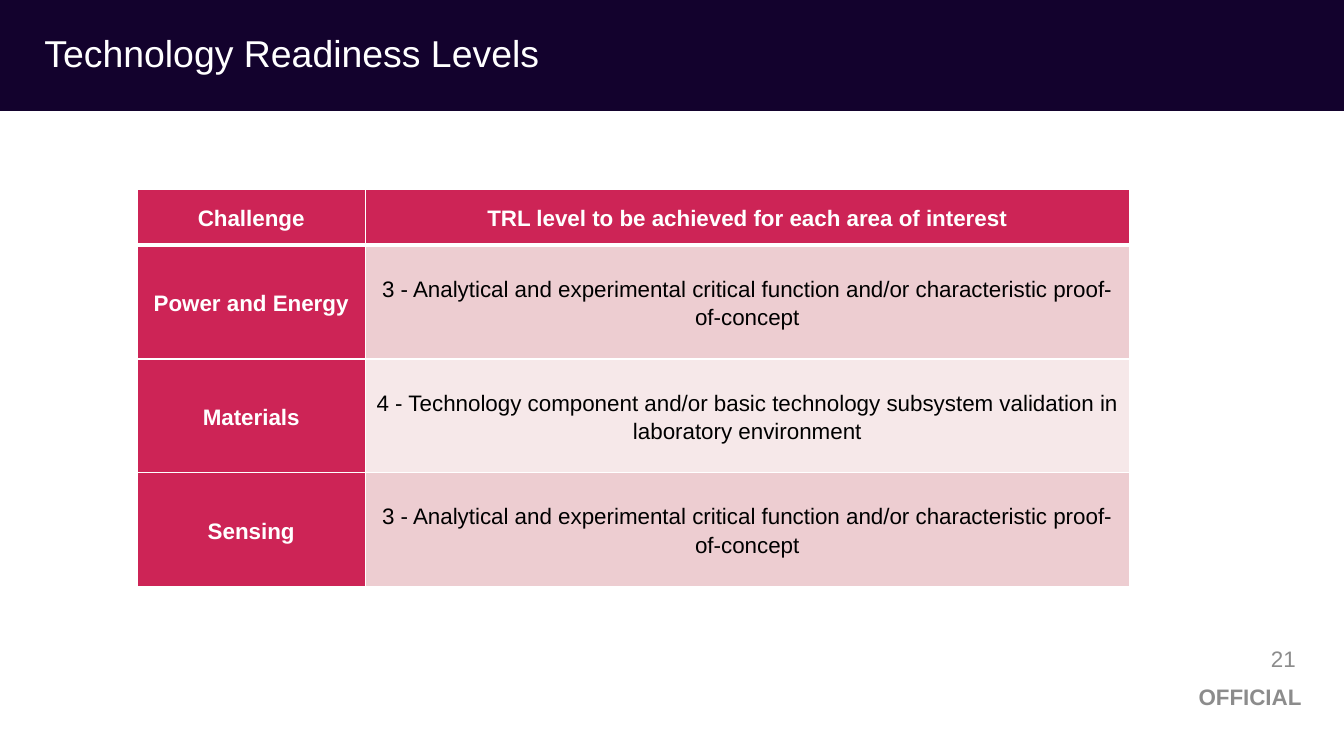
import pptx
import pptx.util
import pptx.dml.color
import pptx.enum.shapes
import pptx.enum.text
import lxml.etree
from dataclasses import dataclass
from typing import NamedTuple

ALIGN = pptx.enum.text.PP_ALIGN
MIDDLE = pptx.enum.text.MSO_ANCHOR.MIDDLE


@dataclass(frozen=True)
class Theme:
    font: str = "Arial"
    navy: str = "13022D"
    red: str = "CD2456"
    rose: str = "EDCDD1"
    blush: str = "F6E8E9"
    white: str = "FFFFFF"
    black: str = "000000"
    grey: str = "8C8C8C"
    title: float = 26.7
    body: float = 16
    thin: float = 1
    thick: float = 3


class Box(NamedTuple):
    left: float
    top: float
    width: float
    height: float

    def inner(self, x, y, w, h):
        """Inner box given as shares of this one."""
        return Box(self.left + x * self.width, self.top + y * self.height,
                   w * self.width, h * self.height)

    def emu(self):
        return [pptx.util.Inches(side) for side in self]


THEME = Theme()
PAGE = Box(0, 0, 13.33, 7.5)
HEADS = ("Challenge", "TRL level to be achieved for each area of interest")
PROOF = ("3 - Analytical and experimental critical function and/or "
         "characteristic proof-of-concept")
LAB = ("4 - Technology component and/or basic technology subsystem "
       "validation in laboratory environment")
LEVELS = (("Power and Energy", PROOF), ("Materials", LAB), ("Sensing", PROOF))


def paint(fill, color):
    fill.solid()
    fill.fore_color.rgb = pptx.dml.color.RGBColor.from_string(color)


def write(para, text, size, color, bold=False, align=ALIGN.LEFT):
    para.alignment = align
    run = para.add_run()
    run.text = text
    run.font.name = THEME.font
    run.font.size = pptx.util.Pt(size)
    run.font.bold = bold
    run.font.color.rgb = pptx.dml.color.RGBColor.from_string(color)


def inset(area, left, top, right, low):
    area.margin_left = pptx.util.Inches(left)
    area.margin_top = pptx.util.Inches(top)
    area.margin_right = pptx.util.Inches(right)
    area.margin_bottom = pptx.util.Inches(low)


def label(slide, box, text, size, color, pads, **style):
    frame = slide.shapes.add_textbox(*box.emu()).text_frame
    frame.word_wrap = True
    frame.vertical_anchor = MIDDLE
    inset(frame, *pads)
    write(frame.paragraphs[0], text, size, color, **style)
    return frame.paragraphs[0]


def edge(cell, sides):
    """Draw white cell borders; sides maps tag to width in points."""
    props = cell._tc.get_or_add_tcPr()
    for spot, (side, width) in enumerate(sides.items()):
        line = lxml.etree.fromstring(
            '<a:%s xmlns:a="http://schemas.openxmlformats.org/drawingml/2006/main"'
            ' w="%d"><a:solidFill><a:srgbClr val="%s"/></a:solidFill></a:%s>'
            % (side, pptx.util.Pt(width), THEME.white, side))
        props.insert(spot, line)


# Title band across the top
def header(slide, box):
    band = slide.shapes.add_shape(
        pptx.enum.shapes.MSO_SHAPE.RECTANGLE, *box.emu())
    band.shadow.inherit = False
    paint(band.fill, THEME.navy)
    band.line.fill.background()
    para = label(slide, box.inner(0, 0.06, 0.75, 0.87),
                 "Technology Readiness Levels", THEME.title, THEME.white,
                 (0.44, 0.05, 0.1, 0.05))
    para.line_spacing = 0.9


# Table of challenges and their levels
def levels(slide, box):
    rows = (HEADS,) + LEVELS
    grid = slide.shapes.add_table(len(rows), len(HEADS), *box.emu()).table
    for col, share in zip(grid.columns, (0.23, 0.77)):
        col.width = pptx.util.Inches(box.width * share)
    for r, texts in enumerate(rows):
        share = 0.14 if r == 0 else 0.86 / len(LEVELS)
        grid.rows[r].height = pptx.util.Inches(box.height * share)
        for c, text in enumerate(texts):
            cell = grid.cell(r, c)
            head = r == 0 or c == 0
            tint = THEME.rose if r % 2 else THEME.blush
            paint(cell.fill, THEME.red if head else tint)
            edge(cell, {"lnL": THEME.thin, "lnR": THEME.thin,
                        "lnT": THEME.thick if r == 1 else THEME.thin,
                        "lnB": THEME.thick if r == 0 else THEME.thin})
            cell.vertical_anchor = MIDDLE
            inset(cell, 0.07, 0, 0.07, 0)
            para = cell.text_frame.paragraphs[0]
            para.line_spacing = 1.15
            para.space_after = pptx.util.Pt(10)
            write(para, text, THEME.body, THEME.white if head else THEME.black,
                  bold=head, align=ALIGN.CENTER)


# Page number and marking at lower right
def footer(slide, box):
    label(slide, box.inner(0, 0, 1, 0.42), "21", THEME.body, THEME.grey,
          (0.1, 0.05, 0.1, 0.05), align=ALIGN.RIGHT)
    label(slide, box.inner(0, 0.45, 1, 0.55), "OFFICIAL", THEME.body, THEME.grey,
          (0.1, 0.05, 0.04, 0.05), bold=True, align=ALIGN.RIGHT)


def main():
    deck = pptx.Presentation()
    deck.slide_width = pptx.util.Inches(PAGE.width)
    deck.slide_height = pptx.util.Inches(PAGE.height)
    slide = deck.slides.add_slide(deck.slide_layouts[6])
    header(slide, PAGE._replace(height=1.1))
    levels(slide, Box(1.36, 1.88, 9.84, 3.94))
    footer(slide, Box(9.95, 6.38, 3, 0.73))
    deck.save("out.pptx")


if __name__ == "__main__":
    main()
